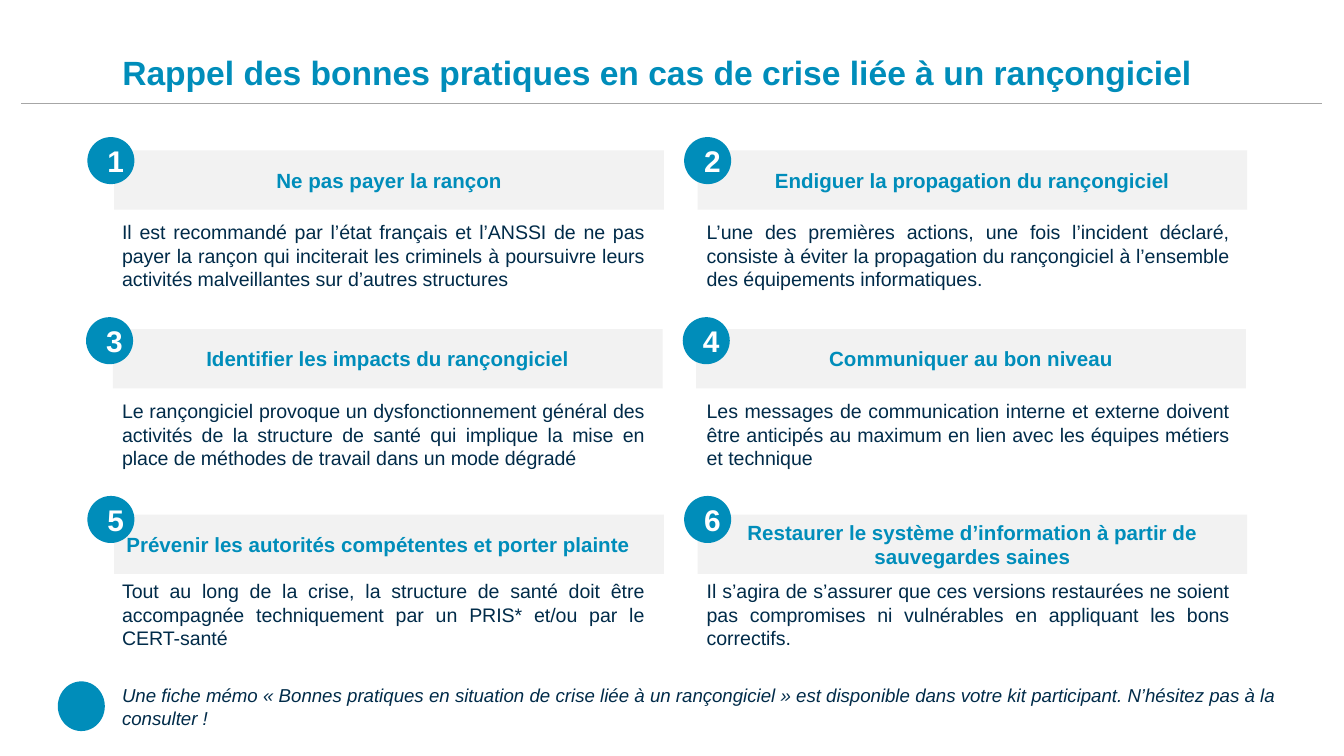
import pptx
import pptx.util
import pptx.dml.color
import pptx.enum.shapes
import pptx.enum.text
import pptx.oxml
import pptx.oxml.ns

Inches = pptx.util.Inches
ALIGN = pptx.enum.text.PP_ALIGN
ANCHOR = pptx.enum.text.MSO_ANCHOR
SHAPE = pptx.enum.shapes.MSO_SHAPE

TITLE = "Rappel des bonnes pratiques en cas de crise liée à un rançongiciel"
PRACTICES = [
    ("Ne pas payer la rançon", ALIGN.CENTER,
     "Il est recommandé par l’état français et l’ANSSI de ne pas payer la rançon qui inciterait "
     "les criminels à poursuivre leurs activités malveillantes sur d’autres structures"),
    ("Endiguer la propagation du rançongiciel", ALIGN.CENTER,
     "L’une des premières actions, une fois l’incident déclaré, consiste à éviter la propagation "
     "du rançongiciel à l’ensemble des équipements informatiques."),
    ("Identifier les impacts du rançongiciel", ALIGN.CENTER,
     "Le rançongiciel provoque un dysfonctionnement général des activités de la structure de santé "
     "qui implique la mise en place de méthodes de travail dans un mode dégradé"),
    ("Communiquer au bon niveau", ALIGN.CENTER,
     "Les messages de communication interne et externe doivent être anticipés au maximum en lien "
     "avec les équipes métiers et technique"),
    ("Prévenir les autorités compétentes et porter plainte", ALIGN.JUSTIFY,
     "Tout au long de la crise, la structure de santé doit être accompagnée techniquement par un "
     "PRIS* et/ou par le CERT-santé"),
    ("Restaurer le système d’information à partir de sauvegardes saines", ALIGN.CENTER,
     "Il s’agira de s’assurer que ces versions restaurées ne soient pas compromises ni vulnérables "
     "en appliquant les bons correctifs."),
]
MEMO = ("Une fiche mémo « Bonnes pratiques en situation de crise liée à un rançongiciel » est "
        "disponible dans votre kit participant. N’hésitez pas à la consulter !")

COLORS = {"blue": "008DBA", "navy": "002B49", "band": "F2F2F2", "rule": "A6A6A6", "white": "FFFFFF"}
COLUMNS = [{"badge": 0.65, "heading": 0.85, "advice": 0.81},
           {"badge": 5.09, "heading": 5.19, "advice": 5.16}]
ROWS = [{"badge": 1.02, "heading": 1.12, "advice": 1.59, "shift": 0},
        {"badge": 2.36, "heading": 2.45, "advice": 2.92, "shift": -0.01},
        {"badge": 3.69, "heading": 3.83, "advice": 4.26, "shift": 0}]
BADGE = 0.35
COLUMN_WIDTH = 4.09


def color(name):
    return pptx.dml.color.RGBColor.from_string(COLORS[name])


def write(frame, text, size, ink, align, bold=False, italic=False):
    frame.word_wrap = True
    frame.text = text
    paragraph = frame.paragraphs[0]
    paragraph.alignment = align
    font = paragraph.runs[0].font
    font.name = "Arial"
    font.size = pptx.util.Pt(size)
    font.bold = bold
    font.italic = italic
    font.color.rgb = color(ink)
    return paragraph


def add_block(slide, kind, left, top, width, height, fill):
    block = slide.shapes.add_shape(kind, Inches(left), Inches(top), Inches(width), Inches(height))
    block.shadow.inherit = False
    block.fill.solid()
    block.fill.fore_color.rgb = color(fill)
    block.line.fill.background()
    return block


def add_note(slide, left, top, width, height, text, size, italic=False):
    note = slide.shapes.add_textbox(Inches(left), Inches(top), Inches(width), Inches(height))
    note.text_frame.auto_size = pptx.enum.text.MSO_AUTO_SIZE.SHAPE_TO_FIT_TEXT
    return write(note.text_frame, text, size, "navy", ALIGN.JUSTIFY, italic=italic)


def add_title(slide):
    title = slide.shapes.title
    title.left, title.top = Inches(0.91), Inches(0.38)
    title.width, title.height = Inches(8.21), Inches(0.31)
    frame = title.text_frame
    frame.auto_size = pptx.enum.text.MSO_AUTO_SIZE.NONE
    frame.vertical_anchor = ANCHOR.BOTTOM
    frame.margin_left = frame.margin_right = frame.margin_top = frame.margin_bottom = 0
    heading = write(frame, TITLE, 18, "blue", ALIGN.LEFT, bold=True)
    heading.line_spacing = pptx.util.Pt(22)

    rule = slide.shapes.add_connector(pptx.enum.shapes.MSO_CONNECTOR.STRAIGHT,
                                      Inches(0.16), Inches(0.77), Inches(9.84), Inches(0.77))
    rule.line.color.rgb = color("rule")
    rule.line.width = pptx.util.Pt(0.25)
    rule._element.spPr.append(pptx.oxml.parse_xml(
        "<a:effectLst %s/>" % pptx.oxml.ns.nsdecls("a")))


def add_practice(slide, index, heading, align, advice):
    row, column = ROWS[index // 2], COLUMNS[index % 2]
    band = add_block(slide, SHAPE.RECTANGLE, column["heading"] + row["shift"], row["heading"],
                     COLUMN_WIDTH, 0.44, "band")
    frame = band.text_frame
    frame.margin_left = frame.margin_right = Inches(0.09)
    frame.margin_top = frame.margin_bottom = Inches(0.06)
    write(frame, heading, 11, "blue", align, bold=True)

    badge = add_block(slide, SHAPE.OVAL, column["badge"] + row["shift"], row["badge"],
                      BADGE, BADGE, "blue")
    write(badge.text_frame, str(index + 1), 16, "white", ALIGN.CENTER, bold=True)

    add_note(slide, column["advice"], row["advice"], COLUMN_WIDTH, 0.63, advice, 10.5)


def add_memo(slide):
    add_block(slide, SHAPE.OVAL, 0.43, 5.07, BADGE, 0.37, "blue")
    memo = add_note(slide, 0.43, 5.04, 9.15, 0.44, MEMO, 10, italic=True)
    memo.level = 1
    properties = memo._p.get_or_add_pPr()
    properties.set("marL", str(Inches(0.38)))
    properties.set("indent", "0")


def main():
    deck = pptx.Presentation()
    deck.slide_width = Inches(10)
    deck.slide_height = deck.slide_width * 9 // 16
    slide = deck.slides.add_slide(deck.slide_layouts[5])
    add_title(slide)
    for index, practice in enumerate(PRACTICES):
        add_practice(slide, index, *practice)
    add_memo(slide)
    deck.save("out.pptx")


if __name__ == "__main__":
    main()
